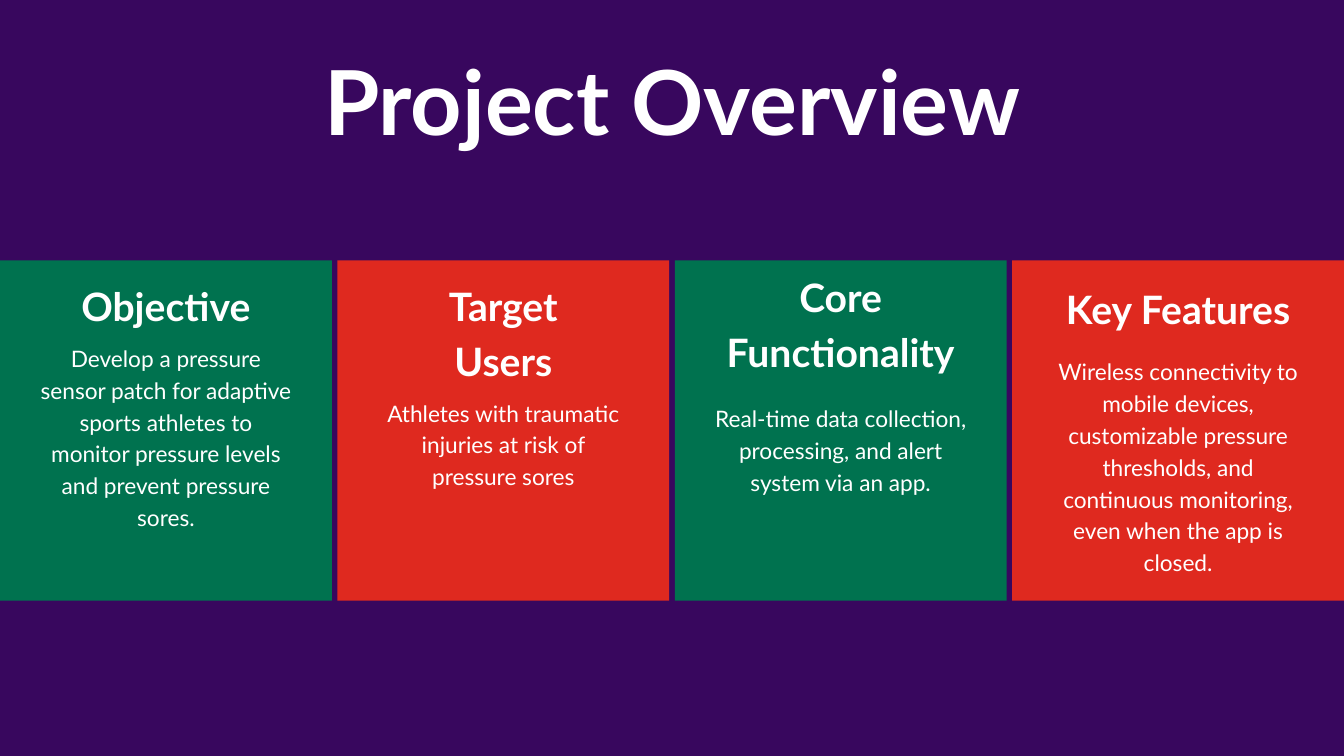
from pptx import Presentation
from pptx.dml.color import RGBColor
from pptx.enum.shapes import MSO_SHAPE as Shape
from pptx.enum.text import MSO_ANCHOR as Anchor, MSO_AUTO_SIZE as Fit, PP_ALIGN as Align
from pptx.util import Pt

PX = 9525  # EMU in one px
WIDE, HIGH = 1920, 1080

PURPLE = RGBColor(0x38, 0x07, 0x5E)
GREEN = RGBColor(0x00, 0x72, 0x4F)
RED = RGBColor(0xDF, 0x29, 0x1F)
WHITE = RGBColor(0xFF, 0xFF, 0xFF)
FONT = "Lato"

# Heading, its top, width and height, then body, its top and height
CARDS = [
    ("Objective", 20, 264, 75,
     "Develop a pressure sensor patch for adaptive sports athletes to "
     "monitor pressure levels and prevent pressure sores.", 114, 314),
    ("Target Users", 20, 264, 154,
     "Athletes with traumatic injuries at risk of pressure sores", 192, 132),
    ("Core Functionality", 7, 412, 154,
     "Real-time data collection, processing, and alert system via an app.", 200, 179),
    ("Key Features", 25, 378, 75,
     "Wireless connectivity to mobile devices, customizable pressure "
     "thresholds, and continuous monitoring, even when the app is closed.", 133, 314),
]


def emu(*nums):
    return [round(n * PX) for n in nums]


def write(shape, text, size=24.3, lead=34.1, bold=False):
    frame = shape.text_frame
    frame.word_wrap = True
    frame.auto_size = Fit.NONE
    frame.vertical_anchor = Anchor.TOP
    frame.margin_left = frame.margin_right = 0
    frame.margin_top = frame.margin_bottom = 0
    para = frame.paragraphs[0]
    para.alignment = Align.CENTER
    para.line_spacing = Pt(lead)
    run = para.add_run()
    run.text = text
    font = run.font
    font.name, font.size, font.bold = FONT, Pt(size), bold
    font.color.rgb = WHITE


def add_title(slide, box):
    title = slide.shapes.title
    title.left, title.top, title.width, title.height = emu(*box)
    write(title, "Project Overview", size=96, lead=115.2, bold=True)


def add_card(slide, box, color, card):
    left, top, width, height = box
    head, head_top, head_wide, head_high, body, body_top, body_high = card

    # Panel
    panel = slide.shapes.add_shape(Shape.RECTANGLE, *emu(*box))
    panel.shadow.inherit = False
    panel.fill.solid()
    panel.fill.fore_color.rgb = color
    panel.line.fill.background()

    # Texts, centred on the panel
    def add_text(text, down, wide, high, **style):
        place = emu(left + (width - wide) / 2, top + down, wide, high)
        write(slide.shapes.add_textbox(*place), text, **style)

    add_text(head, head_top, head_wide, head_high, size=41.9, lead=58.7, bold=True)
    add_text(body, body_top, 360, body_high)


def add_row(slide, box):
    left, top, width, height = box
    wide = 474
    step = (width - wide) / (len(CARDS) - 1)
    for i, card in enumerate(CARDS):
        color = (GREEN, RED)[i % 2]
        add_card(slide, (left + i * step, top, wide, height), color, card)


def main():
    deck = Presentation()
    deck.slide_width, deck.slide_height = emu(WIDE, HIGH)
    slide = deck.slides.add_slide(deck.slide_layouts[5])
    slide.background.fill.solid()
    slide.background.fill.fore_color.rgb = PURPLE
    add_title(slide, (324, 65, 1272, 153))
    add_row(slide, (0, 372, WIDE, 486))
    deck.save("out.pptx")


if __name__ == "__main__":
    main()
